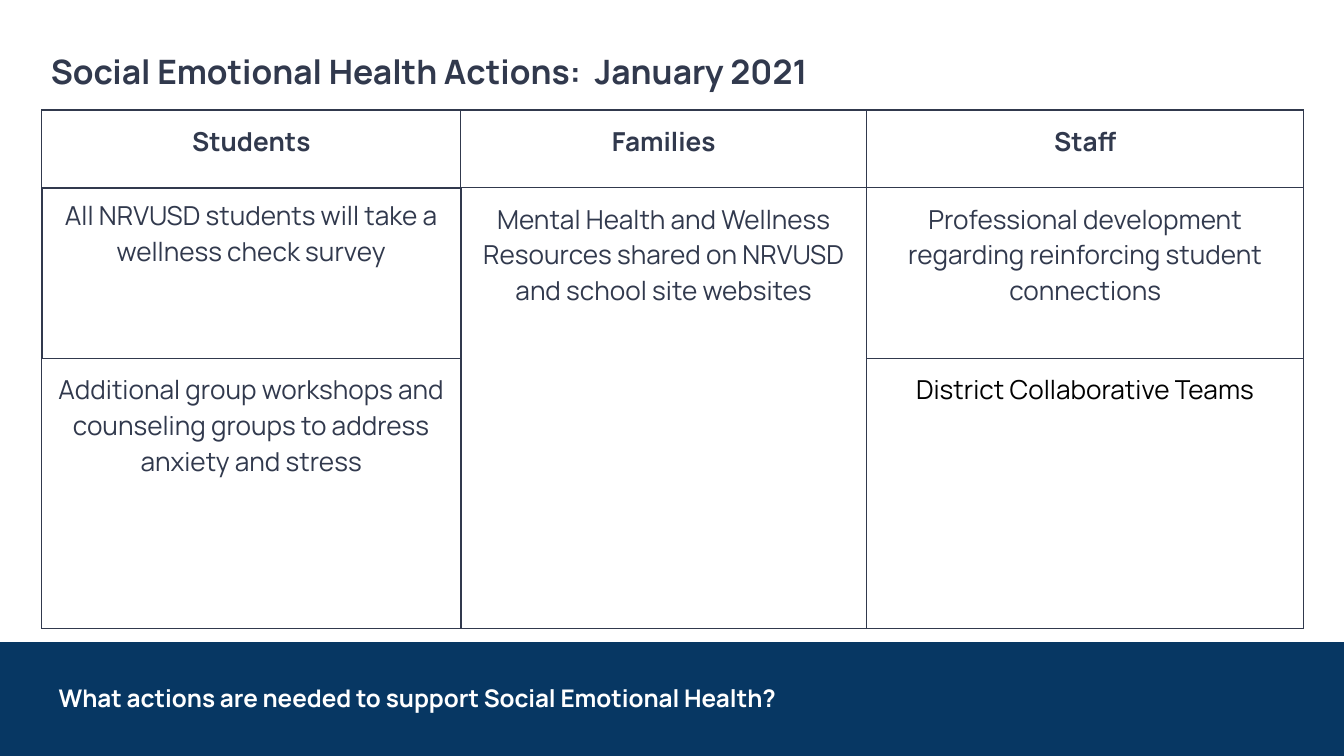
"""Build the social emotional health actions slide."""
from lxml import etree
from pptx import Presentation
from pptx import util as u
from pptx.dml.color import RGBColor
from pptx.enum import shapes, text
from pptx.oxml import ns

INK, NAVY, WHITE, BLACK = "31394D", "073763", "FFFFFF", "000000"


def add_run(p, words, size, color, bold=False):
    r = p.add_run()
    r.text = words
    r.font.name = "Manrope"
    r.font.size = u.Pt(size)
    r.font.bold = bold
    r.font.color.rgb = RGBColor.from_string(color)


def place(sp, left, top, width, height):
    sp.left, sp.top, sp.width, sp.height = map(u.Cm, (left, top, width, height))


prs = Presentation()
prs.slide_width, prs.slide_height = u.Cm(25.4), u.Cm(14.29)
s = prs.slides.add_slide(prs.slide_layouts[1])
title, body = s.shapes.title, s.placeholders[1]

band = s.shapes.add_shape(shapes.MSO_SHAPE.RECTANGLE, 0, u.Cm(12.14), u.Cm(25.4), u.Cm(2.15))
band.shadow.inherit = False
band.fill.solid()
band.fill.fore_color.rgb = RGBColor.from_string(NAVY)
band.line.fill.background()
title.element.addprevious(band.element)

place(title, 0.71, 0.48, 24.05, 1.42)
place(body, 0.86, 12.55, 22.17, 1.27)
headings = [
    (title, "Social Emotional Health Actions:  January 2021", 18, INK, text.MSO_ANCHOR.TOP, 0.48),
    (body, "What actions are needed to support Social Emotional Health?", 13, WHITE,
     text.MSO_ANCHOR.MIDDLE, 0.25),
]
for sp, words, size, color, anchor, top in headings:
    tf = sp.text_frame
    tf.word_wrap = True
    tf.auto_size = text.MSO_AUTO_SIZE.NONE
    tf.vertical_anchor = anchor
    tf.margin_left = tf.margin_right = tf.margin_bottom = u.Cm(0.25)
    tf.margin_top = u.Cm(top)
    p = tf.paragraphs[0]
    p.alignment = text.PP_ALIGN.LEFT
    p.space_before = u.Pt(0)
    add_run(p, words, size, color, True)
    pPr = p._p.get_or_add_pPr()
    pPr.set("marL", "0")
    pPr.set("indent", "0")
    etree.SubElement(pPr, ns.qn("a:buNone"))

rows = [
    ["Students", "Families", "Staff"],
    ["All NRVUSD students will take a wellness check survey",
     "Mental Health and Wellness Resources shared on NRVUSD and school site websites",
     "Professional development regarding reinforcing student connections"],
    ["Additional group workshops and counseling groups to address anxiety and stress",
     "", "District Collaborative Teams"],
]
widths, heights = [7.92, 7.67, 8.26], [1.47, 3.23, 5.1]
thick = {(0, 0): "B", (1, 0): "LRTB", (1, 1): "L", (2, 0): "T"}

frame = s.shapes.add_table(3, 3, u.Cm(0.79), u.Cm(2.08), u.Cm(sum(widths)), u.Cm(sum(heights)))
table = frame.table
table.first_row = table.horz_banding = False
for column, width in zip(table.columns, widths):
    column.width = u.Cm(width)
for row, height in zip(table.rows, heights):
    row.height = u.Cm(height)
table.cell(1, 1).merge(table.cell(2, 1))

for i, row in enumerate(rows):
    for j, words in enumerate(row):
        cell = table.cell(i, j)
        inset = u.Cm(0.18 if (i, j) == (1, 0) else 0.25)
        cell.margin_left = cell.margin_right = cell.margin_top = cell.margin_bottom = inset
        cell.fill.background()
        tcPr = cell._tc.get_or_add_tcPr()
        for k, side in enumerate("LRTB"):
            width = u.Pt(1 if side in thick.get((i, j), "") else 0.75)
            ln = etree.Element(ns.qn("a:ln" + side), w=str(int(width)))
            fill = etree.SubElement(ln, ns.qn("a:solidFill"))
            etree.SubElement(fill, ns.qn("a:srgbClr"), val=INK)
            tcPr.insert(k, ln)
        if words:
            p = cell.text_frame.paragraphs[0]
            p.alignment = text.PP_ALIGN.CENTER
            add_run(p, words, 14, BLACK if (i, j) == (2, 2) else INK, i == 0)

prs.save("out.pptx")
